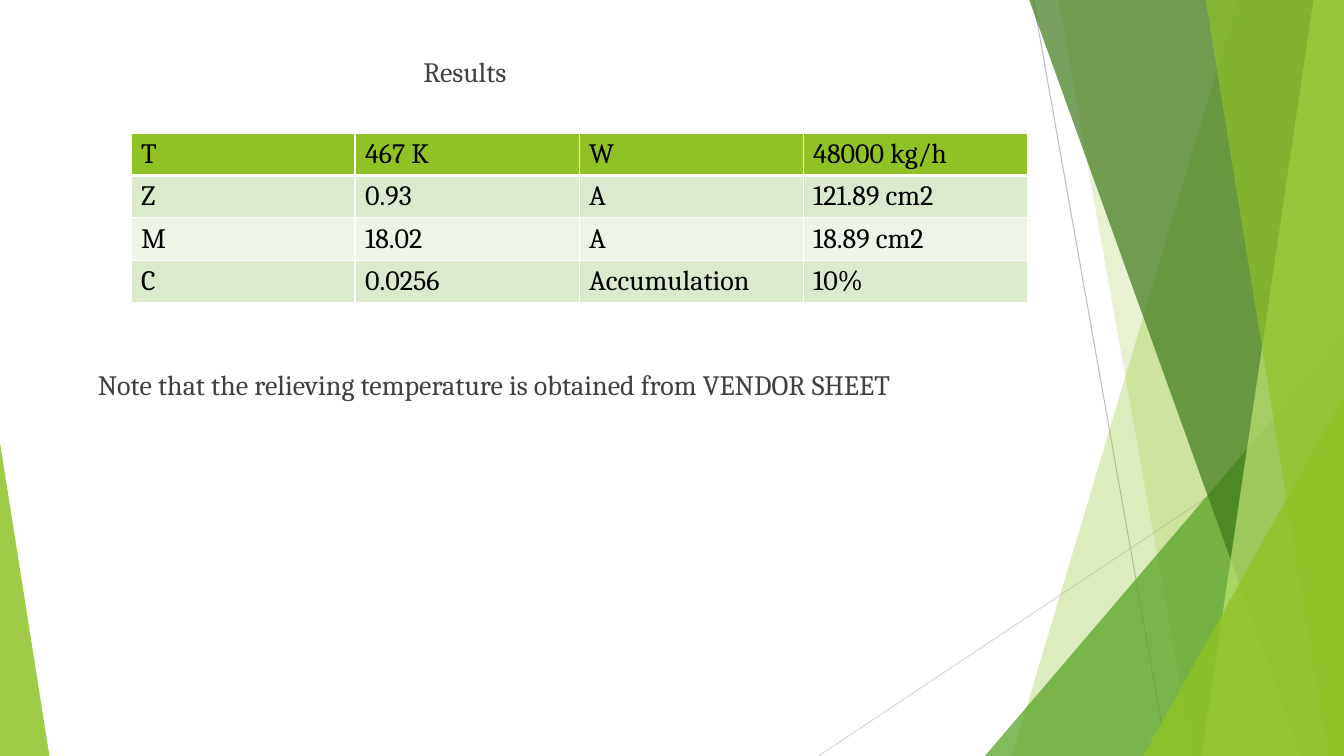
import pptx
import pptx.util
import pptx.dml.color
import pptx.enum.shapes
import pptx.enum.text
import pptx.oxml.ns
import lxml.etree

RGB = pptx.dml.color.RGBColor
WIDE = pptx.util.Inches(13.33)
HIGH = pptx.util.Inches(7.5)
FONT = "Cambria"

LIME = RGB(0x90, 0xC2, 0x26)
PALE = RGB(0xC0, 0xE4, 0x74)
LEAF = RGB(0x54, 0xA0, 0x21)
DARK = RGB(0x3F, 0x78, 0x19)
TINT = RGB(0xDB, 0xE9, 0xCD)
MIST = RGB(0xEE, 0xF4, 0xE8)
WHITE = RGB(0xFF, 0xFF, 0xFF)
BLACK = RGB(0, 0, 0)
GREY = RGB(0x40, 0x40, 0x40)
RULE = RGB(0xBF, 0xBF, 0xBF)
FAINT = RGB(0xD9, 0xD9, 0xD9)

# Rays: ends as percent of the slide, then colour
RAYS = [
    (76.88, 0, 86.85, 100, RULE),
    (100, 53.73, 60.9, 100, FAINT),
]

# Bands reach the right edge: left side at top and at bottom, colour, opacity
BACK = [(92.1, 75.3, LIME, 30), (78.75, 88.75, LIME, 20)]
FRONT = [
    (76.58, 96.83, DARK, 70),
    (97.73, 89.4, PALE, 70),
    (89.7, 98.85, LIME, 65),
]

DATA = [
    ["T", "467 K", "W", "48000 kg/h"],
    ["Z", "0.93", "A", "121.89 cm2"],
    ["M", "18.02", "A", "18.89 cm2"],
    ["C", "0.0256", "Accumulation", "10%"],
]
FILLS = [LIME, TINT, MIST, TINT]


def across(share):
    return round(WIDE * share / 100)


def down(share):
    return round(HIGH * share / 100)


def node(parent, tag, **attrs):
    return lxml.etree.SubElement(parent, pptx.oxml.ns.qn(tag), attrs)


def paint(shape, color, alpha):
    shape.shadow.inherit = False
    shape.line.fill.background()
    shape.fill.solid()
    shape.fill.fore_color.rgb = color
    tone = shape.fill._xPr.find(".//" + pptx.oxml.ns.qn("a:srgbClr"))
    node(tone, "a:alpha", val=str(alpha * 1000))


def ray(slide, x1, y1, x2, y2, color):
    line = slide.shapes.add_connector(
        pptx.enum.shapes.MSO_CONNECTOR.STRAIGHT,
        across(x1), down(y1), across(x2), down(y2))
    line.line.color.rgb = color
    line.line.width = pptx.util.Pt(0.75)
    node(line._element.spPr, "a:effectLst")


def band(slide, top, base, color, alpha):
    pen = slide.shapes.build_freeform(across(top), 0)
    pen.add_line_segments(
        [(WIDE, 0), (WIDE, HIGH), (across(base), HIGH)], close=True)
    paint(pen.convert_to_shape(), color, alpha)


def wedge(slide, left, top, width, peak, color, alpha):
    """Triangle standing on the bottom edge; peak 0 is left, 1 is right."""
    shape = slide.shapes.add_shape(
        pptx.enum.shapes.MSO_SHAPE.ISOSCELES_TRIANGLE,
        across(left), down(top), across(width), down(100 - top))
    shape.adjustments[0] = peak
    paint(shape, color, alpha)


def style(frame, color):
    for run in frame.paragraphs[0].runs:
        run.font.name = FONT
        run.font.size = pptx.util.Pt(20)
        run.font.color.rgb = color


def label(shape, text, left, top, width):
    shape.left, shape.top = across(left), down(top)
    shape.width, shape.height = across(width), down(6)
    frame = shape.text_frame
    frame.text = text
    frame.word_wrap = True
    frame.auto_size = pptx.enum.text.MSO_AUTO_SIZE.NONE
    frame.vertical_anchor = pptx.enum.text.MSO_ANCHOR.MIDDLE
    frame.margin_left = frame.margin_right = 0
    frame.margin_top = frame.margin_bottom = 0
    frame.paragraphs[0].alignment = pptx.enum.text.PP_ALIGN.LEFT
    style(frame, GREY)


def border(cell, sides):
    props = cell._tc.get_or_add_tcPr()
    for spot, (side, size) in enumerate(sides.items()):
        edge = node(props, "a:ln" + side, w=str(pptx.util.Pt(size)))
        node(node(edge, "a:solidFill"), "a:srgbClr", val=str(WHITE))
        props.insert(spot, edge)


def grid(slide, left, top, col, row):
    rows, cols = len(DATA), len(DATA[0])
    table = slide.shapes.add_table(
        rows, cols, across(left), down(top),
        across(col * cols), down(row * rows)).table
    for r, (texts, fill) in enumerate(zip(DATA, FILLS)):
        for c, text in enumerate(texts):
            cell = table.cell(r, c)
            cell.text = text
            style(cell.text_frame, BLACK)
            cell.fill.solid()
            cell.fill.fore_color.rgb = fill
            border(cell, {"L": 1, "R": 1, "T": 3 if r == 1 else 1,
                          "B": 3 if r == 0 else 1})


def main():
    deck = pptx.Presentation()
    deck.slide_width, deck.slide_height = WIDE, HIGH
    slide = deck.slides.add_slide(deck.slide_layouts[5])

    # Green facets, from back to front
    for item in RAYS:
        ray(slide, *item)
    for item in BACK:
        band(slide, *item)
    wedge(slide, 73.28, 44.4, 26.72, 1, LEAF, 72)
    for item in FRONT:
        band(slide, *item)
    wedge(slide, 85.05, 52.4, 14.95, 1, LIME, 80)
    wedge(slide, 0, 58.53, 3.68, 0, LIME, 85)

    # Title, table and note
    label(slide.shapes.title, "Results", 31.5, 6.4, 30)
    grid(slide, 9.75, 17.6, 16.67, 5.6)
    note = slide.shapes.add_textbox(0, 0, 0, 0)
    label(note, "Note that the relieving temperature is obtained "
          "from VENDOR SHEET", 7.28, 47.8, 65)

    deck.save("out.pptx")


if __name__ == "__main__":
    main()
